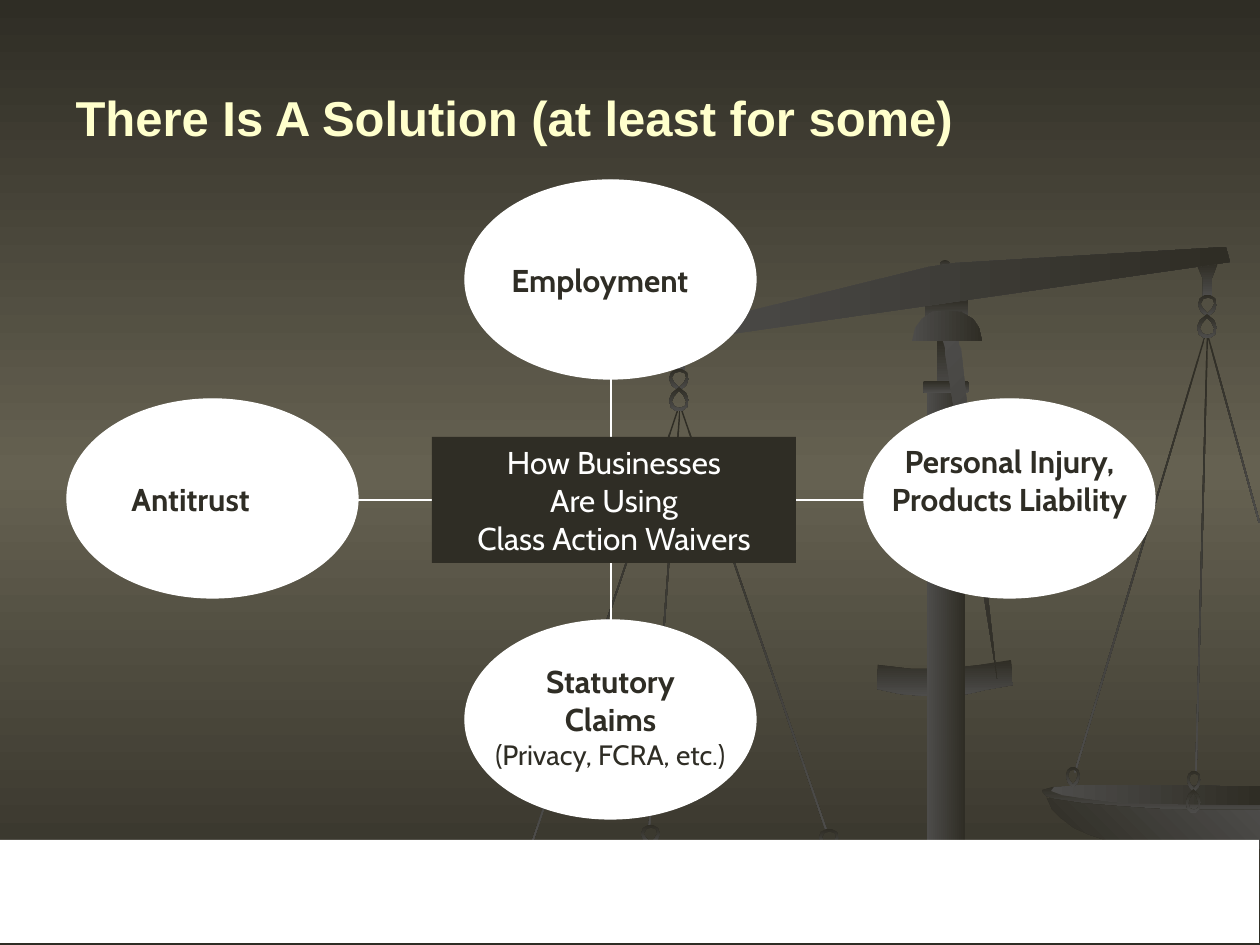
from copy import deepcopy

from pptx import Presentation
from pptx.dml.color import RGBColor
from pptx.enum.shapes import MSO_CONNECTOR, MSO_SHAPE
from pptx.enum.text import MSO_ANCHOR, PP_ALIGN
from pptx.oxml.ns import qn
from pptx.oxml.xmlchemy import OxmlElement
from pptx.util import Pt

COLORS = {"dark": "2F2D25", "olive": "656151", "metal": "4D4C4A",
          "white": "FFFFFF", "title": "FFFFCC"}
DOWN, ACROSS, DIAGONAL, RISING = 270, 0, 315, 45
TITLE = "There Is A Solution (at least for some)"
RECT, OVAL = MSO_SHAPE.RECTANGLE, MSO_SHAPE.OVAL

STRINGS = [
    (1139, 328, 454, 16.6), (1201, 335, 437, 1.5), (1233, 333, 193, 344.6),
    (753, 397, 445, 341), (603, 398, 464, 18.6), (664, 409, 417, 4.2),
]
LINK_OUTER = [(50, 100), (85, 75), (100, 45), (90, 15), (65, 0), (35, 0),
              (10, 15), (0, 45), (15, 75)]
LINK_INNER = [(55, 12), (80, 20), (86, 40), (72, 65), (50, 84), (25, 60),
              (14, 40), (28, 18)]
LINKS = [
    (1066, 767, 14, 21, False), (1187, 771, 14, 21, False),
    (1186, 789, 15, 24, True), (669, 369, 20, 22, False),
    (669, 387, 20, 24, True), (1198, 295, 19, 22, False),
    (1197, 314, 20, 24, True), (641, 825, 19, 21, False),
    (819, 829, 20, 20, False),
]
YOKE = [(878, 665), (912, 669), (931, 669), (954, 668), (980, 665), (1011, 660),
        (1013, 685), (985, 690), (968, 694), (946, 696), (924, 696), (900, 694),
        (877, 689)]
PAN_RIM = [(1207, 786), (1166, 786), (1130, 786), (1103, 785), (1078, 786),
           (1053, 787), (1043, 790), (1042, 791), (1046, 796), (1061, 801),
           (1087, 805), (1126, 809), (1178, 811), (1207, 813), (1260, 813),
           (1260, 789), (1235, 789)]
PAN_BOWL = [(1047, 798), (1052, 809), (1061, 818), (1074, 828), (1090, 835),
            (1111, 842), (1138, 847), (1169, 849), (1206, 851), (1235, 851),
            (1260, 849), (1260, 810), (1201, 810), (1157, 809), (1116, 806),
            (1080, 803)]
PAN_INSIDE = [(1205, 785), (1131, 785), (1083, 785), (1054, 787), (1051, 791),
              (1062, 795), (1090, 799), (1125, 803), (1176, 804), (1260, 805),
              (1260, 786), (1220, 786)]
HANGER = [(21, 0), (0, 2), (6, 16), (6, 33), (15, 33), (15, 15)]
HANGER_PLACES = [(670, 338), (1197, 263)]
BEAM = [(1226, 247), (1230, 262), (662, 344), (660, 333), (929, 267), (956, 263)]
ARM = [(997, 679), (945, 353), (945, 348), (942, 338), (958, 334), (959, 345),
       (961, 349)]
DOME = [(950, 311), (961, 312), (973, 319), (979, 328), (982, 341), (912, 341),
        (915, 328), (922, 319), (932, 312)]

OVAL_SIZE = (291, 199)
OVALS = [(465, 180), (465, 620), (864, 399), (67, 399)]
SPOKES = [(611, 379, 611, 620), (357, 500, 864, 500)]
HUB = (432, 437, 364, 126)
HUB_LINES = ["How Businesses", "Are Using", "Class Action Waivers"]
LABELS = [
    ((499, 255, 234, 50), PP_ALIGN.LEFT, [("Employment", 18, True)]),
    ((119, 474, 215, 50), PP_ALIGN.LEFT, [("Antitrust", 18, True)]),
    ((864, 436, 291, 127), PP_ALIGN.CENTER,
     [("Personal Injury, Products Liability", 18, True)]),
    ((465, 656, 291, 123), PP_ALIGN.CENTER,
     [("Statutory", 18, True), ("Claims", 18, True),
      ("(Privacy, FCRA, etc.)", 16, False)]),
]


def emu(px):
    return round(px * 914400 / 126)


def color(name):
    return RGBColor.from_string(COLORS[name])


def set_stops(fill, names):
    for index, (stop, name) in enumerate(zip(fill.gradient_stops, names)):
        stop.position = index / (len(names) - 1)
        stop.color.rgb = color(name)


def paint(shape, angle, names=("dark", "metal")):
    shape.shadow.inherit = False
    shape.line.fill.background()
    shape.fill.gradient()
    shape.fill.gradient_angle = angle
    set_stops(shape.fill, names)


def add_preset(kind, box, fill="white", line=None):
    shape = page.shapes.add_shape(kind, *map(emu, box))
    shape.shadow.inherit = False
    shape.fill.solid()
    shape.fill.fore_color.rgb = color(fill)
    if line:
        shape.line.color.rgb = color(line)
        shape.line.width = Pt(0.75)
    else:
        shape.line.fill.background()
    return shape


def add_outline(contours, angle, names=("dark", "metal")):
    contours = [[(emu(x), emu(y)) for x, y in points] for points in contours]
    builder = page.shapes.build_freeform(*contours[0][0], scale=1.0)
    builder.add_line_segments(contours[0][1:], close=True)
    for points in contours[1:]:
        builder.move_to(*points[0])
        builder.add_line_segments(points[1:], close=True)
    paint(builder.convert_to_shape(), angle, names)


def add_link(left, top, width, height, flipped):
    def place(points):
        return [(left + x * width / 100,
                 top + (100 - y if flipped else y) * height / 100)
                for x, y in points]
    add_outline([place(LINK_OUTER), place(LINK_INNER)], DOWN)


def write(frame, lines, align, ink, font="Cabin"):
    frame.word_wrap = True
    for index, (text, size, bold) in enumerate(lines):
        para = frame.paragraphs[0] if index == 0 else frame.add_paragraph()
        para.alignment = align
        span = para.add_run()
        span.text = text
        formats = {"name": font, "size": Pt(size), "bold": bold}
        for key, value in formats.items():
            setattr(span.font, key, value)
        span.font.color.rgb = color(ink)


deck = Presentation()
deck.slide_width, deck.slide_height = emu(1260), emu(945)
page = deck.slides.add_slide(deck.slide_layouts[5])

backdrop = page.background.fill
backdrop.gradient()
backdrop.gradient_angle = DOWN
stop_list = page.element.find(".//" + qn("a:gsLst"))
stop_list.append(deepcopy(stop_list[0]))
set_stops(backdrop, ("dark", "olive", "dark"))

reverse = ("metal", "dark")
paint(add_preset(RECT, (925, 299, 43, 23)), DOWN)
paint(add_preset(OVAL, (940, 260, 10, 10)), DOWN)
for left, top, length, turn in STRINGS:
    string = add_preset(RECT, (left, top, 1.5, length))
    string.rotation = turn
    paint(string, DOWN)
add_outline([YOKE], DOWN)
add_outline([PAN_RIM], DOWN)
add_outline([PAN_BOWL], RISING)
add_outline([PAN_INSIDE], ACROSS, reverse)
for left, top in HANGER_PLACES:
    add_outline([[(left + x, top + y) for x, y in HANGER]], DOWN)
for link in LINKS:
    add_link(*link)
add_outline([BEAM], ACROSS, reverse)
paint(add_preset(RECT, (927, 388, 38, 555)), ACROSS, reverse)
paint(add_preset(RECT, (937, 338, 17, 53)), DOWN)
paint(add_preset(MSO_SHAPE.ROUNDED_RECTANGLE, (923, 381, 46, 12)), DOWN)
add_outline([ARM], DIAGONAL, reverse)
add_outline([DOME], ACROSS, reverse)
add_preset(RECT, (0, 840, 1259, 103))

title = page.shapes.title
title.left, title.top, title.width, title.height = map(emu, (63, 38, 1134, 158))
title.text_frame.vertical_anchor = MSO_ANCHOR.MIDDLE
write(title.text_frame, [(TITLE, 28, True)], PP_ALIGN.LEFT, "title", "Arial")

for place in OVALS:
    add_preset(OVAL, place + OVAL_SIZE, line="white")
for ends in SPOKES:
    spoke = page.shapes.add_connector(MSO_CONNECTOR.STRAIGHT, *map(emu, ends))
    spoke.line.color.rgb = color("white")
    spoke.line.width = Pt(0.75)
    spoke.element.spPr.append(OxmlElement("a:effectLst"))
hub = add_preset(RECT, HUB, "dark")
hub.text_frame.vertical_anchor = MSO_ANCHOR.MIDDLE
write(hub.text_frame, [(text, 18, False) for text in HUB_LINES],
      PP_ALIGN.CENTER, "white")
for box, align, lines in LABELS:
    label = page.shapes.add_textbox(*map(emu, box))
    write(label.text_frame, lines, align, "dark")

deck.save("out.pptx")
